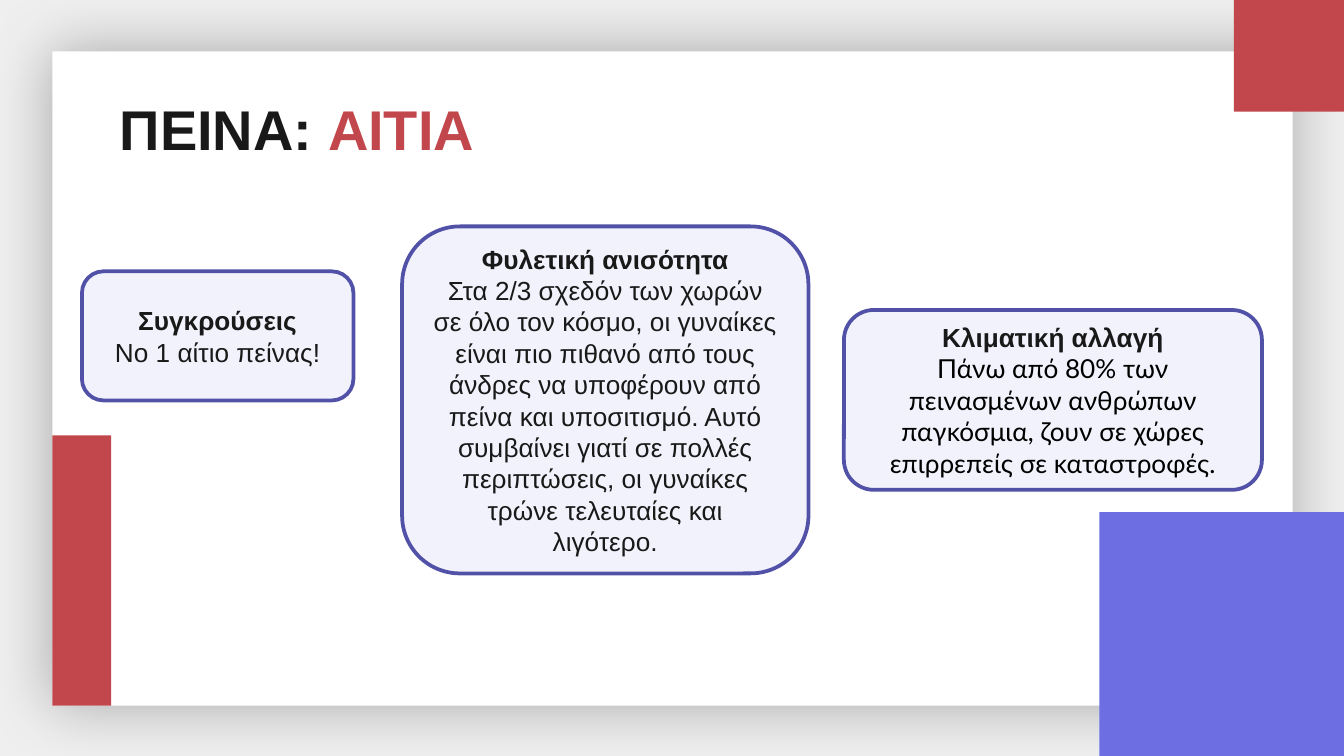
from lxml.etree import SubElement
from pptx import Presentation
from pptx.dml.color import RGBColor
from pptx.enum.shapes import MSO_SHAPE as Shape
from pptx.enum.text import MSO_ANCHOR as Anchor, MSO_AUTO_SIZE as AutoSize, PP_ALIGN as Align
from pptx.oxml.ns import qn
from pptx.util import Cm, Pt


def color(value):
    return RGBColor.from_string(value)


def write(paragraph, text, size=14, font="Arial", ink="191919", bold=False):
    run = paragraph.add_run()
    run.text = text
    run.font.size = Pt(size)
    run.font.name = font
    run.font.bold = bold
    run.font.color.rgb = color(ink)


class CauseSlide:
    paper, white, red, blue = "EFEFEF", "FFFFFF", "C2474C", "6E6EE3"
    card_fill, card_line = "F2F2FC", "5151A8"

    def __init__(self, deck):
        self.slide = deck.slides.add_slide(deck.slide_layouts[5])
        background = self.slide.background.fill
        background.solid()
        background.fore_color.rgb = color(self.paper)

    def block(self, bounds, fill, kind=Shape.RECTANGLE):
        block = self.slide.shapes.add_shape(kind, *map(Cm, bounds))
        block.shadow.inherit = False
        block.fill.solid()
        block.fill.fore_color.rgb = color(fill)
        block.line.fill.background()
        return block

    def panel(self, bounds):
        panel = self.block(bounds, self.white)
        effects = panel.element.spPr.find(qn("a:effectLst"))
        glow = SubElement(effects, qn("a:outerShdw"), blurRad=str(Pt(33.8)),
                          dist="0", dir="0", algn="ctr", rotWithShape="0")
        tint = SubElement(glow, qn("a:srgbClr"), val="000000")
        SubElement(tint, qn("a:alpha"), val="30000")

    def title(self, bounds, topic, accent):
        title = self.slide.shapes.title
        title.left, title.top, title.width, title.height = map(Cm, bounds)
        frame = title.text_frame
        frame.word_wrap = True
        frame.auto_size = AutoSize.NONE
        frame.vertical_anchor = Anchor.BOTTOM
        frame.margin_left = frame.margin_right = Cm(0.25)
        frame.margin_top = frame.margin_bottom = Cm(0.25)
        heading = frame.paragraphs[0]
        heading.alignment = Align.LEFT
        write(heading, topic, size=30, bold=True)
        write(heading, accent, size=30, bold=True, ink=self.red)
        self.slide.shapes.element.append(title.element)

    def card(self, bounds, cause, detail, **detail_format):
        card = self.block(bounds, self.card_fill, Shape.ROUNDED_RECTANGLE)
        card.line.color.rgb = color(self.card_line)
        card.line.width = Pt(2)
        frame = card.text_frame
        frame.word_wrap = True
        frame.vertical_anchor = Anchor.MIDDLE
        heading, body = frame.paragraphs[0], frame.add_paragraph()
        for paragraph in (heading, body):
            paragraph.alignment = Align.CENTER
            paragraph.line_spacing = Pt(16.8)
        write(heading, cause, bold=True)
        write(body, detail, **detail_format)


def main():
    deck = Presentation()
    deck.slide_width, deck.slide_height = Cm(25.4), Cm(14.29)
    hunger = CauseSlide(deck)
    hunger.panel((0.99, 0.97, 23.44, 12.37))
    hunger.block((20.78, 9.68, 4.62, 4.61), hunger.blue)
    hunger.block((23.32, 0, 2.08, 2.11), hunger.red)
    hunger.block((0.99, 8.23, 1.11, 5.11), hunger.red)
    hunger.title((2.01, 1.7, 21.41, 1.6), "ΠΕΙΝΑ: ", "ΑΙΤΙΑ")
    hunger.card((7.6, 4.28, 7.68, 6.56), "Φυλετική ανισότητα",
                "Στα 2/3 σχεδόν των χωρών σε όλο τον κόσμο, οι γυναίκες είναι πιο "
                "πιθανό από τους άνδρες να υποφέρουν από πείνα και υποσιτισμό. Αυτό "
                "συμβαίνει γιατί σε πολλές περιπτώσεις, οι γυναίκες τρώνε τελευταίες "
                "και λιγότερο.")
    hunger.card((1.55, 5.13, 5.13, 2.44), "Συγκρούσεις", "Νο 1 αίτιο πείνας!")
    hunger.card((15.95, 5.86, 7.9, 3.4), "Κλιματική αλλαγή",
                "Πάνω από 80% των πεινασμένων ανθρώπων παγκόσμια, ζουν σε χώρες "
                "επιρρεπείς σε καταστροφές.", font="Lato", ink="000000")
    deck.save("out.pptx")


if __name__ == "__main__":
    main()
